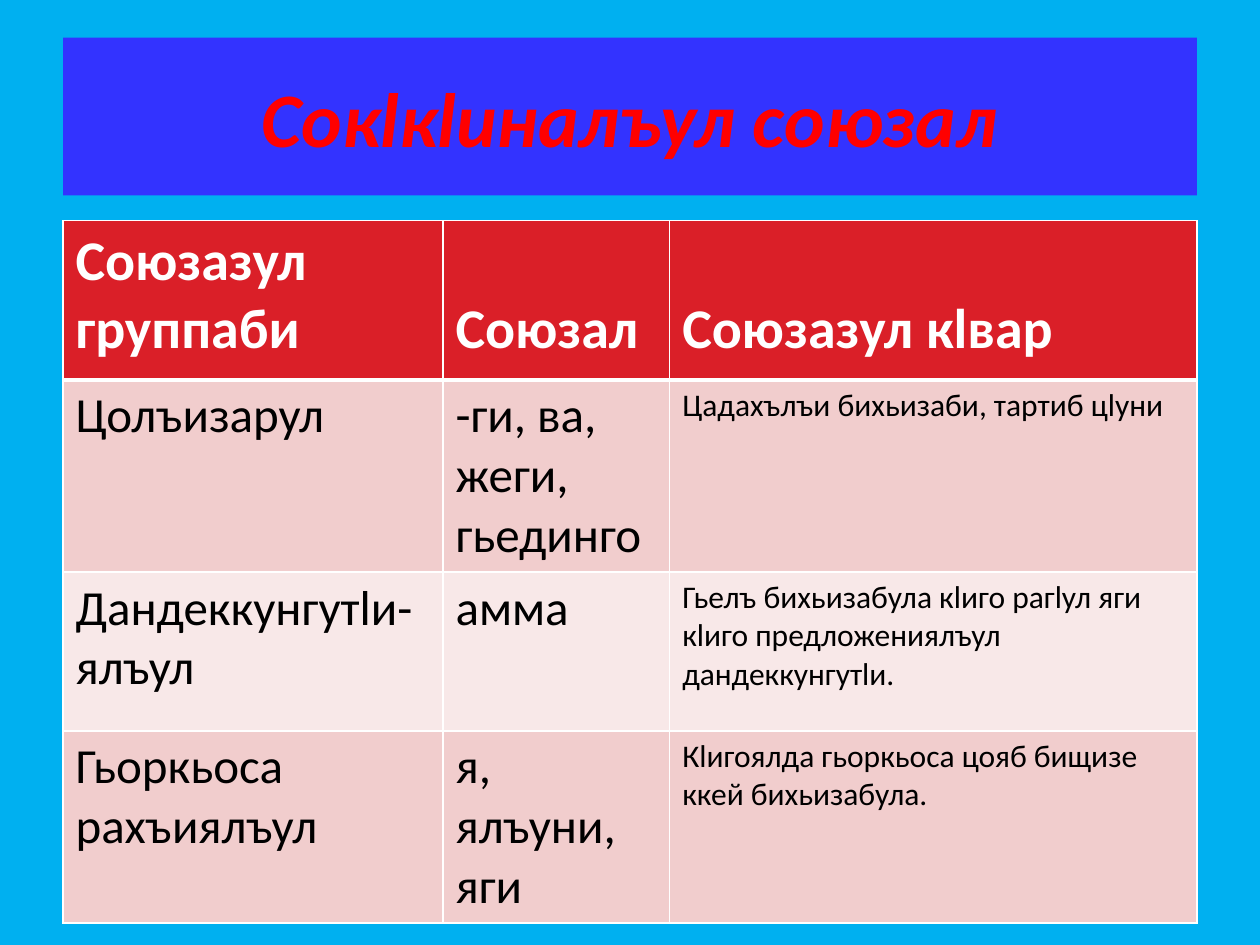
from dataclasses import dataclass

from lxml.etree import SubElement
from pptx import Presentation
from pptx.dml.color import RGBColor
from pptx.enum.text import MSO_ANCHOR as Anchor, PP_ALIGN as Align
from pptx.oxml.ns import qn
from pptx.util import Cm, Pt

COLORS = {
    "page": "00B0F0",
    "banner": "3333FF",
    "title": "FF0000",
    "header": "DA1F28",
    "odd": "F1CDCD",
    "even": "F8E8E8",
    "white": "FFFFFF",
    "text": "000000",
}
FONT = "Calibri"
LEFT, WIDTH = Cm(1.27), Cm(22.86)
COLUMN_WIDTHS = (7.66, 4.57, 10.63)


@dataclass(frozen=True)
class Row:
    texts: tuple[str, str, str]
    fill: str
    height: float
    sizes: tuple[int, int, int] = (28, 28, 18)
    is_header: bool = False


ROWS = (
    Row(("Союзазул группаби", "Союзал", "Союзазул кlвар"),
        "header", 3.2, (32, 32, 32), True),
    Row(("Цолъизарул", "-ги, ва, жеги, гьединго",
         "Цадахълъи бихьизаби, тартиб цlуни"), "odd", 2.46),
    Row(("Дандеккунгутlи-ялъул", "амма",
         "Гьелъ бихьизабула кlиго рагlул яги кlиго предложениялъул "
         "дандеккунгутlи."), "even", 3.2),
    Row(("Гьоркьоса рахъиялъул", "я, ялъуни, яги",
         "Кlигоялда гьоркьоса цояб бищизе ккей бихьизабула."), "odd", 3.2),
)


def rgb(name: str) -> RGBColor:
    return RGBColor.from_string(COLORS[name])


def format_text(frame, size: int, color: str, bold=False, italic=False) -> None:
    for para in frame.paragraphs:
        for span in para.runs:
            font = span.font
            font.name, font.size = FONT, Pt(size)
            font.bold, font.italic = bold, italic
            font.color.rgb = rgb(color)


def add_borders(cell, bottom_width: int) -> None:
    """Draw white cell borders; must run before the cell is filled."""
    properties = cell._tc.get_or_add_tcPr()
    for side in "LRTB":
        width = Pt(bottom_width if side == "B" else 1)
        line = SubElement(properties, qn(f"a:ln{side}"), w=str(width))
        fill = SubElement(line, qn("a:solidFill"))
        SubElement(fill, qn("a:srgbClr"), val=COLORS["white"])


def add_title(page, text: str) -> None:
    title = page.shapes.title
    title.left, title.top, title.width, title.height = LEFT, Cm(0.76), WIDTH, Cm(3.18)
    title.fill.solid()
    title.fill.fore_color.rgb = rgb("banner")
    frame = title.text_frame
    frame.text = text
    frame.vertical_anchor = Anchor.MIDDLE
    frame.paragraphs[0].alignment = Align.CENTER
    format_text(frame, 44, "title", bold=True, italic=True)


def fill_row(cells, row: Row, above_is_header: bool) -> None:
    for cell, text, size in zip(cells, row.texts, row.sizes):
        add_borders(cell, 3 if row.is_header else 1)
        if above_is_header:
            cell._tc.tcPr.find(qn("a:lnT")).set("w", str(Pt(3)))
        cell.fill.solid()
        cell.fill.fore_color.rgb = rgb(row.fill)
        cell.text_frame.text = text
        if row.is_header:
            cell.vertical_anchor = Anchor.BOTTOM
            cell.margin_bottom = Cm(0.32)
        format_text(cell.text_frame, size,
                    "white" if row.is_header else "text", bold=row.is_header)


def add_conjunction_table(page) -> None:
    table = page.shapes.add_table(
        len(ROWS), len(COLUMN_WIDTHS), LEFT, Cm(4.45), WIDTH,
        Cm(sum(row.height for row in ROWS))).table
    for column, width in zip(table.columns, COLUMN_WIDTHS):
        column.width = Cm(width)
    for index, (line, row) in enumerate(zip(table.rows, ROWS)):
        line.height = Cm(row.height)
        fill_row(line.cells, row, above_is_header=index == 1)


def main() -> None:
    deck = Presentation()
    deck.slide_width, deck.slide_height = Cm(25.4), Cm(19.05)
    page = deck.slides.add_slide(deck.slide_layouts[5])
    page.background.fill.solid()
    page.background.fill.fore_color.rgb = rgb("page")
    add_title(page, "Сокlкlиналъул союзал")
    add_conjunction_table(page)
    deck.save("out.pptx")


if __name__ == "__main__":
    main()
